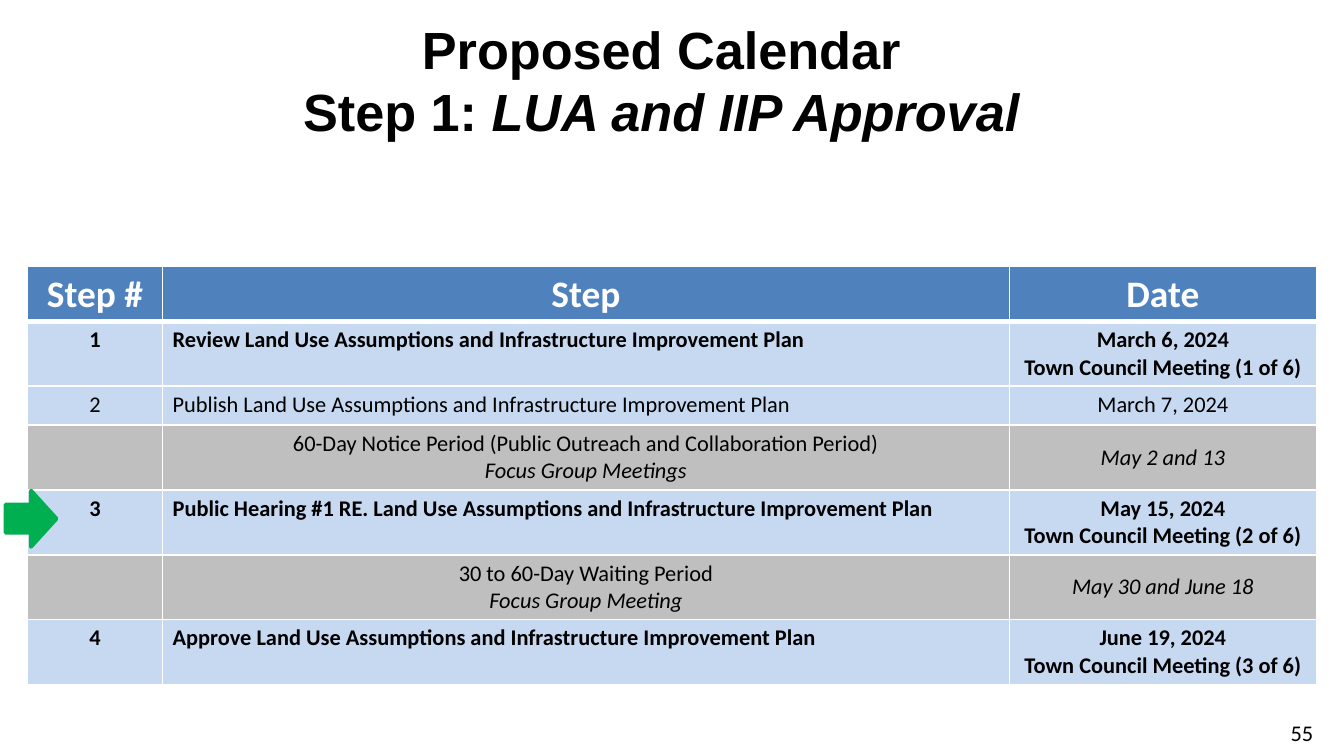
import pptx
import pptx.util
import pptx.dml.color
import pptx.enum.shapes
import pptx.enum.text
import pptx.oxml
import pptx.oxml.ns

Pt = pptx.util.Pt
ALIGN = pptx.enum.text.PP_ALIGN
ANCHOR = pptx.enum.text.MSO_ANCHOR

BLUE, LIGHT, GREY, GREEN = "4F81BD", "C6D9F1", "BFBFBF", "00B050"
BOLD, ITALIC = {"bold": True}, {"italic": True}


def rgb(value):
    return pptx.dml.color.RGBColor.from_string(value)


class Deck:
    """Holds the shared style and the current slide."""

    body = {"name": "Calibri", "size": Pt(12), "bold": False, "italic": False}

    def __init__(self, width, height):
        self.prs = pptx.Presentation()
        self.prs.slide_width, self.prs.slide_height = Pt(width), Pt(height)
        self.s = self.prs.slides.add_slide(self.prs.slide_layouts[6])

    def fill_text(self, tf, paragraphs, align, color="000000", **base):
        """Fill a frame; each paragraph is a list of (text, format) runs."""
        tf.word_wrap = True
        for i, runs in enumerate(paragraphs):
            p = tf.add_paragraph() if i else tf.paragraphs[0]
            p.alignment = align
            for text, fmt in runs:
                r = p.add_run()
                r.text = text
                for key, value in {**self.body, **base, **fmt}.items():
                    setattr(r.font, key, value)
                r.font.color.rgb = rgb(color)

    def text(self, x, y, w, h, paragraphs, align, **base):
        sp = self.s.shapes.add_textbox(Pt(x), Pt(y), Pt(w), Pt(h))
        self.fill_text(sp.text_frame, paragraphs, align, **base)

    def shape(self, kind, x, y, w, h, color, line_width):
        sp = self.s.shapes.add_shape(kind, Pt(x), Pt(y), Pt(w), Pt(h))
        sp.shadow.inherit = False
        sp.fill.solid()
        sp.fill.fore_color.rgb = rgb(color)
        sp.line.color.rgb = rgb(color)
        sp.line.width = Pt(line_width)

    def table(self, x, y, widths, heights):
        frame = self.s.shapes.add_table(len(heights), len(widths), Pt(x), Pt(y),
                                        Pt(sum(widths)), Pt(sum(heights)))
        table = frame.table
        table.horz_banding = False
        for column, width in zip(table.columns, widths):
            column.width = Pt(width)
        for row, height in zip(table.rows, heights):
            row.height = Pt(height)
        return table

    def cell(self, cell, paragraphs, align, fill, top=1, bottom=1,
             anchor=ANCHOR.TOP, **base):
        cell.margin_left = cell.margin_right = Pt(5.4)
        cell.margin_top = cell.margin_bottom = Pt(2.7)
        cell.vertical_anchor = anchor
        props = cell._tc.get_or_add_tcPr()
        for side, width in (("L", 1), ("R", 1), ("T", top), ("B", bottom)):
            props.append(pptx.oxml.parse_xml(
                f'<a:ln{side} {pptx.oxml.ns.nsdecls("a")} w="{Pt(width)}"><a:solidFill>'
                f'<a:srgbClr val="FFFFFF"/></a:solidFill></a:ln{side}>'))
        cell.fill.solid()
        cell.fill.fore_color.rgb = rgb(fill)
        self.fill_text(cell.text_frame, paragraphs, align, **base)


def calendar(deck):
    plan = "Land Use Assumptions and Infrastructure Improvement Plan"
    meeting = "Town Council Meeting ({} of 6)"
    # number, step lines, date lines, bold; periods between steps have no number
    rows = [
        ("1", [f"Review {plan}"], ["March 6, 2024", meeting.format(1)], True),
        ("2", [f"Publish {plan}"], ["March 7, 2024"], False),
        ("", ["60-Day Notice Period (Public Outreach and Collaboration Period)",
              "Focus Group Meetings"], ["May 2 and 13"], False),
        ("3", [f"Public Hearing #1 RE. {plan}"], ["May 15, 2024", meeting.format(2)], True),
        ("", ["30 to 60-Day Waiting Period", "Focus Group Meeting"],
         ["May 30 and June 18"], False),
        ("4", [f"Approve {plan}"], ["June 19, 2024", meeting.format(3)], True),
    ]
    heights = [28.8] + [34.7 if len(step + date) > 2 else 20.9 for _, step, date, _ in rows]
    table = deck.table(14.7, 142.8, [72.4, 453.6, 164.6], heights)
    for c, label in enumerate(["Step #", "Step", "Date"]):
        deck.cell(table.cell(0, c), [[(label, BOLD)]], ALIGN.CENTER, BLUE,
                  bottom=3, color="FFFFFF", size=Pt(20))
    for i, (number, step, date, bold) in enumerate(rows, 1):
        fill = LIGHT if number else GREY
        top = 3 if i == 1 else 1
        step_runs = [[(line, ITALIC if k else {})] for k, line in enumerate(step)]
        date_runs = [[(line, {} if number else ITALIC)] for line in date]
        deck.cell(table.cell(i, 0), [[(number, {})]] if number else [], ALIGN.CENTER,
                  fill, top, bold=bold)
        deck.cell(table.cell(i, 1), step_runs, ALIGN.LEFT if number else ALIGN.CENTER,
                  fill, top, bold=bold)
        deck.cell(table.cell(i, 2), date_runs, ALIGN.CENTER, fill, top,
                  anchor=ANCHOR.TOP if number else ANCHOR.MIDDLE, bold=bold)


def main():
    deck = Deck(720, 405)
    deck.text(54, 5.5, 600.5, 72,
              [[("Proposed Calendar", {})],
               [("Step 1: ", {}), ("LUA and IIP Approval", ITALIC)]],
              ALIGN.CENTER, name="Arial", size=Pt(28), bold=True)
    calendar(deck)
    deck.text(666, 381.6, 44.6, 21.6, [[("55", {})]], ALIGN.RIGHT)
    deck.shape(pptx.enum.shapes.MSO_SHAPE.RIGHT_ARROW, 2.9, 262.8, 27.4, 30.2, GREEN, 2)
    deck.prs.save("out.pptx")


if __name__ == "__main__":
    main()
